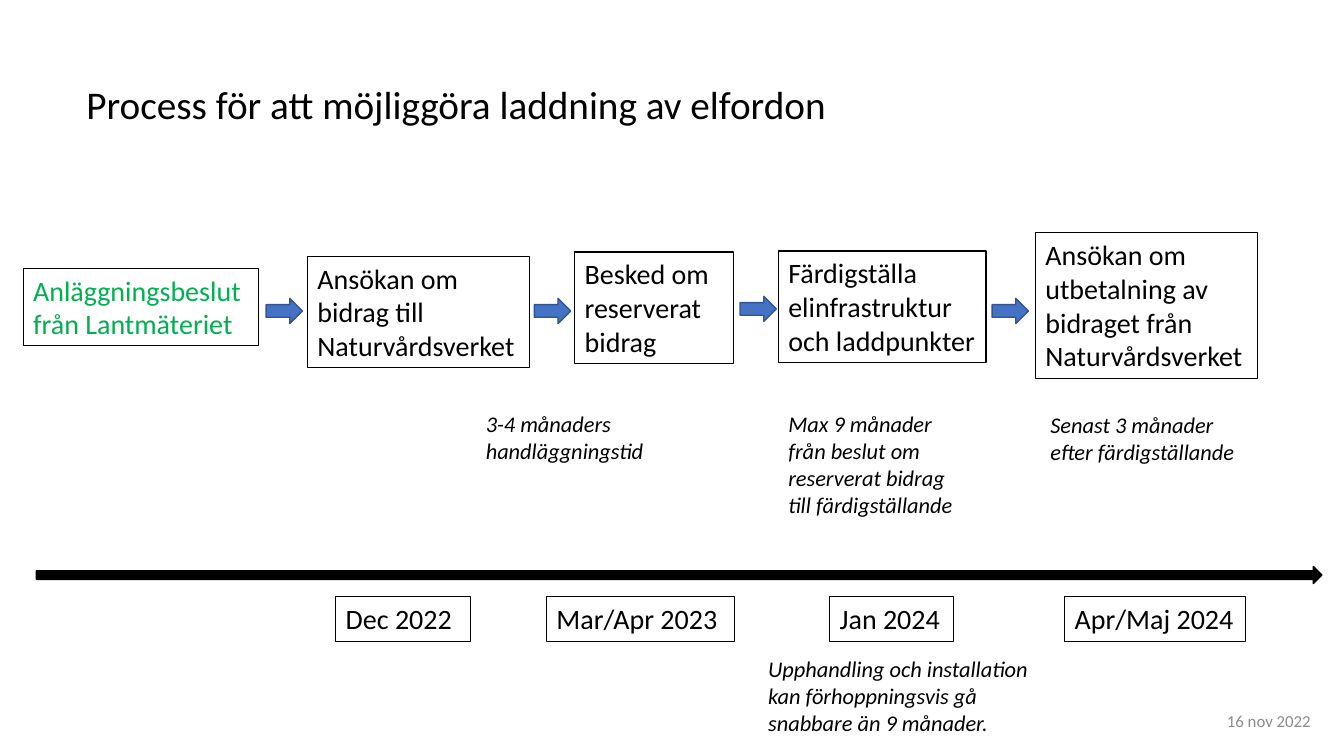
from dataclasses import dataclass

from pptx import Presentation
from pptx.dml.color import RGBColor
from pptx.enum.shapes import MSO_SHAPE
from pptx.enum.text import MSO_ANCHOR, PP_ALIGN
from pptx.util import Inches, Pt


@dataclass(frozen=True)
class Theme:
    """Colours, font and type sizes of the slide."""
    font: str = "Calibri"
    black: str = "000000"
    green: str = "00B050"
    grey: str = "8C8C8C"
    blue: str = "4472C4"
    dark_blue: str = "325491"
    title_size: int = 28
    box_size: int = 20
    note_size: int = 16
    date_size: int = 12


class ProcessSlide:
    """Draws the elements of a process on one slide."""

    def __init__(self, slide, theme):
        self.slide = slide
        self.theme = theme

    def add_words(self, shape, text, size, color, italic=False,
                  align=PP_ALIGN.LEFT, anchor=MSO_ANCHOR.TOP, spacing=1.0):
        """Fill a shape with wrapped text, breaking at each newline."""
        frame = shape.text_frame
        frame.word_wrap = True
        frame.vertical_anchor = anchor
        paragraph = frame.paragraphs[0]
        paragraph.alignment = align
        paragraph.line_spacing = spacing
        for index, line in enumerate(text.split("\n")):
            if index:
                paragraph.add_line_break()
            run = paragraph.add_run()
            run.text = line
            run.font.name = self.theme.font
            run.font.size = Pt(size)
            run.font.italic = italic
            run.font.color.rgb = RGBColor.from_string(color)

    def add_text(self, bounds, text, size, color, **style):
        """Add a plain text box."""
        box = self.slide.shapes.add_textbox(*map(Inches, bounds))
        self.add_words(box, text, size, color, **style)

    def add_note(self, bounds, text):
        """Add an italic explanation."""
        self.add_text(bounds, text, self.theme.note_size, self.theme.black, italic=True)

    def add_preset(self, kind, bounds, line, width):
        """Add an outlined preset shape without shadow."""
        shape = self.slide.shapes.add_shape(kind, *map(Inches, bounds))
        shape.shadow.inherit = False
        shape.line.color.rgb = RGBColor.from_string(line)
        shape.line.width = Pt(width)
        return shape

    def add_box(self, bounds, text, color):
        """Add a framed label."""
        shape = self.add_preset(MSO_SHAPE.RECTANGLE, bounds, self.theme.black, 0.75)
        shape.fill.background()
        self.add_words(shape, text, self.theme.box_size, color)

    def add_arrow(self, bounds, fill, line):
        """Add a filled block arrow pointing right."""
        shape = self.add_preset(MSO_SHAPE.RIGHT_ARROW, bounds, line, 1)
        shape.fill.solid()
        shape.fill.fore_color.rgb = RGBColor.from_string(fill)


def main():
    """Build and save the slide."""
    presentation = Presentation()
    presentation.slide_width = Inches(13.33)
    presentation.slide_height = Inches(7.5)
    theme = Theme()
    process = ProcessSlide(
        presentation.slides.add_slide(presentation.slide_layouts[6]), theme)

    process.add_text((0.76, 0.33, 11.5, 1.45),
                     "Process för att möjliggöra laddning av elfordon",
                     theme.title_size, theme.black,
                     anchor=MSO_ANCHOR.MIDDLE, spacing=0.9)

    steps = [
        ((0.23, 2.66, 2.33, 0.77), "Anläggningsbeslut från Lantmäteriet", theme.green),
        ((3.05, 2.54, 2.2, 1.11), "Ansökan om bidrag till Naturvårdsverket", theme.black),
        ((5.7, 2.5, 1.58, 1.11), "Besked om reserverat bidrag", theme.black),
        ((7.72, 2.49, 2.06, 1.11), "Färdigställa elinfrastruktur och laddpunkter",
         theme.black),
        ((10.27, 2.31, 2.2, 1.45),
         "Ansökan om utbetalning av bidraget från Naturvårdsverket", theme.black),
    ]
    for bounds, text, color in steps:
        process.add_box(bounds, text, color)

    for left, top in [(2.64, 2.96), (5.3, 2.96), (7.34, 2.94), (9.84, 2.96)]:
        process.add_arrow((left, top, 0.36, 0.25), theme.blue, theme.dark_blue)

    process.add_arrow((0.36, 5.62, 12.75, 0.17), theme.black, theme.black)
    milestones = [
        (3.33, 1.34, "Dec 2022"),
        (5.42, 1.87, "Mar/Apr 2023"),
        (8.23, 1.23, "Jan 2024"),
        (10.56, 1.79, "Apr/Maj 2024"),
    ]
    for left, width, text in milestones:
        process.add_box((left, 5.92, width, 0.44), text, theme.black)

    notes = [
        ((4.72, 4.02, 1.77, 0.64), "3-4 månaders\nhandläggningstid"),
        ((7.72, 4.02, 1.92, 1.18),
         "Max 9 månader från beslut om reserverat bidrag till färdigställande"),
        ((10.32, 4.03, 2.2, 0.64), "Senast 3 månader efter färdigställande"),
        ((7.52, 6.45, 3.06, 0.91),
         "Upphandling och installation kan förhoppningsvis gå snabbare än 9 månader."),
    ]
    for bounds, text in notes:
        process.add_note(bounds, text)

    process.add_text((8.6, 6.95, 4.5, 0.4), "16 nov 2022", theme.date_size, theme.grey,
                     align=PP_ALIGN.RIGHT, anchor=MSO_ANCHOR.MIDDLE)
    presentation.save("out.pptx")


if __name__ == "__main__":
    main()
